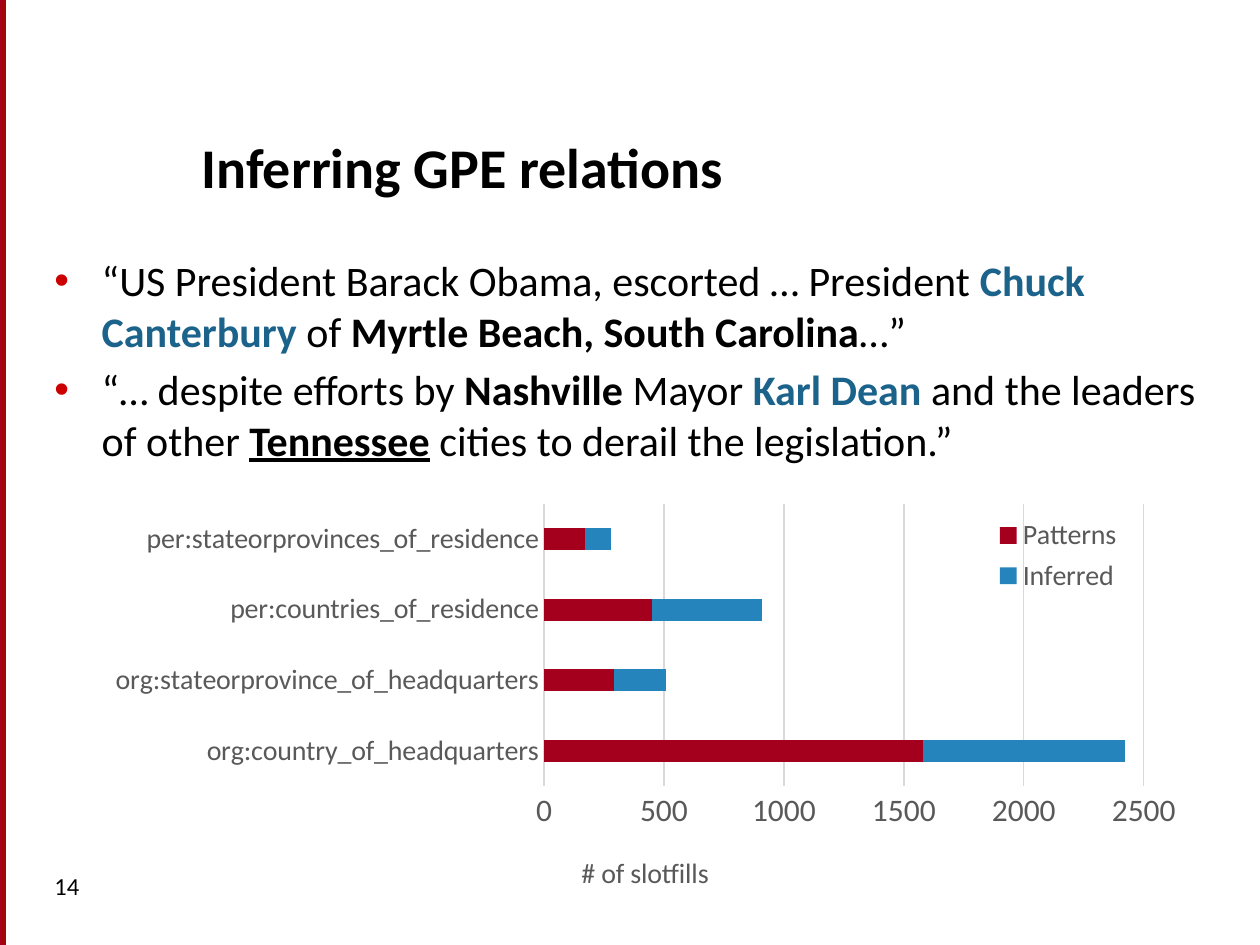
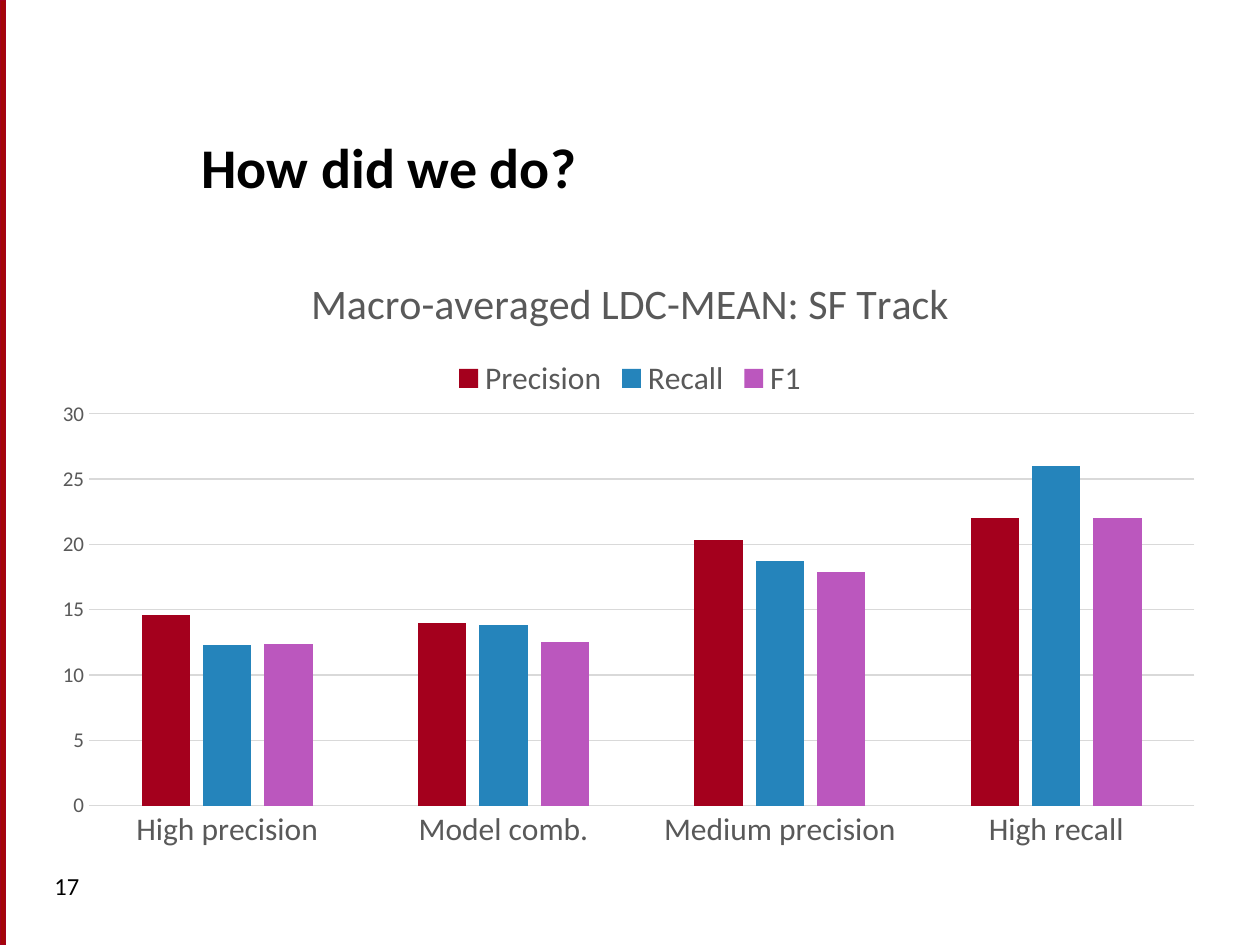
import pptx
import pptx.util
import pptx.chart.data
import pptx.dml.color
import pptx.enum.chart
import pptx.enum.shapes
import pptx.enum.text
import pptx.oxml.ns
import pptx.oxml.xmlchemy

Pt = pptx.util.Pt
qn = pptx.oxml.ns.qn
XL = pptx.enum.chart

FONT = "Calibri"
BLACK, GREY, GRID = "000000", "595959", "D9D9D9"
BAND, RED, BLUE, PURPLE, NAME, BULLET = "A40508", "A4001D", "2584BB", "BB57BE", "1C638C", "CC0000"

PERSON = dict(bold=True, color=NAME)
PLACE = dict(bold=True)
QUOTES = [
    [("“US President Barack Obama, escorted … President ", {}), ("Chuck Canterbury", PERSON),
     (" of ", {}), ("Myrtle Beach, South Carolina", PLACE), ("…”", {})],
    [("“… despite efforts by ", {}), ("Nashville", PLACE), (" Mayor ", {}),
     ("Karl Dean", PERSON), (" and the leaders of other ", {}),
     ("Tennessee", dict(bold=True, underline=True)),
     (" cities to derail the legislation.”", {})],
]

SLOTFILLS = dict(
    kind=XL.XL_CHART_TYPE.BAR_STACKED, box=(60, 276, 612, 238), overlap=100,
    cats=["org:country_of_headquarters", "org:stateorprovince_of_headquarters",
          "per:countries_of_residence", "per:stateorprovinces_of_residence"],
    series=[("Patterns", [1580, 290, 450, 170], RED),
            ("Inferred", [840, 220, 460, 110], BLUE)],
    top=2500, step=500, cat_size=16, val_size=18, legend_size=16,
    legend_pos=XL.XL_LEGEND_POSITION.RIGHT, legend_area=(0.82, 0.07, 0.14, 0.21),
    plot_area=(0.41, 0.05, 0.56, 0.68),
    axis_title="# of slotfills", axis_title_at=(0.44, 0.88))

SCORES = dict(
    kind=XL.XL_CHART_TYPE.COLUMN_CLUSTERED, box=(24, 142, 672, 350), overlap=-27,
    cats=["High precision", "Model comb.", "Medium precision", "High recall"],
    series=[("Precision", [14.6, 14, 20.3, 22], RED),
            ("Recall", [12.3, 13.8, 18.7, 26], BLUE),
            ("F1", [12.4, 12.5, 17.9, 22], PURPLE)],
    top=30, step=5, cat_size=18, val_size=12, legend_size=18,
    legend_pos=XL.XL_LEGEND_POSITION.TOP, plot_area=(0.04, 0.27, 0.94, 0.64),
    title="Macro-averaged LDC-MEAN: SF Track")

SLIDES = [
    dict(title="Inferring GPE relations", number="14", quotes=QUOTES, chart=SLOTFILLS),
    dict(title="How did we do?", number="17", quotes=[], chart=SCORES),
]


def rgb(color):
    return pptx.dml.color.RGBColor.from_string(color)


def element(tag, **attrs):
    el = pptx.oxml.xmlchemy.OxmlElement(tag)
    for key, value in attrs.items():
        el.set(key, str(value))
    return el


def style(font, size, color):
    font.name, font.size = FONT, Pt(size)
    font.color.rgb = rgb(color)


def add_text(p, text, size=24, color=BLACK, bold=False, underline=False):
    r = p.add_run()
    r.text = text
    style(r.font, size, color)
    r.font.bold, r.font.underline = bold, underline


def add_box(s, left, top, width, height):
    tf = s.shapes.add_textbox(Pt(left), Pt(top), Pt(width), Pt(height)).text_frame
    tf.word_wrap = True
    return tf


def add_bullet(p, indent=27):
    pPr = p._p.get_or_add_pPr()
    pPr.set("marL", str(Pt(indent)))
    pPr.set("indent", str(-Pt(indent)))
    color = element("a:buClr")
    color.append(element("a:srgbClr", val=BULLET))
    pPr.extend([color, element("a:buFont", typeface="Arial"), element("a:buChar", char="•")])


def add_quotes(s, quotes):
    tf = add_box(s, 24, 142, 672, 130)
    for i, quote in enumerate(quotes):
        p = tf.add_paragraph() if i else tf.paragraphs[0]
        add_bullet(p)
        p.space_before = Pt(4.8 if i else 0)
        for text, fmt in quote:
            add_text(p, text, **fmt)


def place(parent, area, inner=False):
    for old in parent.findall(qn("c:layout")):
        parent.remove(old)
    layout = element("c:layout")
    manual = element("c:manualLayout")
    layout.append(manual)
    values = [("layoutTarget", "inner")] if inner else []
    values += [("xMode", "edge"), ("yMode", "edge")] + list(zip("xywh", area))
    for tag, value in values:
        manual.append(element("c:" + tag, val=value))
    overlay = parent.find(qn("c:overlay"))
    (parent[0] if overlay is None else overlay).addprevious(layout)


def format_axis(axis, size):
    style(axis.tick_labels.font, size, GREY)
    axis.major_tick_mark = axis.minor_tick_mark = XL.XL_TICK_MARK.NONE


def grid_line(line):
    line.color.rgb = rgb(GRID)
    line.width = Pt(0.75)


def add_chart(s, info):
    data = pptx.chart.data.CategoryChartData()
    data.categories = info["cats"]
    for name, values, color in info["series"]:
        data.add_series(name, values)
    chart = s.shapes.add_chart(info["kind"], *map(Pt, info["box"]), data).chart
    style(chart.font, 10, BLACK)

    plot = chart.plots[0]
    plot.vary_by_categories = False
    plot.gap_width, plot.overlap = 219, info["overlap"]
    for series, (name, values, color) in zip(plot.series, info["series"]):
        series.format.fill.solid()
        series.format.fill.fore_color.rgb = rgb(color)
    place(chart._chartSpace.chart.plotArea, info["plot_area"], inner=True)

    cat, val = chart.category_axis, chart.value_axis
    format_axis(cat, info["cat_size"])
    format_axis(val, info["val_size"])
    cat.has_major_gridlines = False
    grid_line(cat.format.line)
    val.has_major_gridlines = True
    grid_line(val.major_gridlines.format.line)
    val.format.line.fill.background()
    val.minimum_scale, val.maximum_scale, val.major_unit = 0, info["top"], info["step"]

    chart.has_legend = True
    legend = chart.legend
    legend.position = info["legend_pos"]
    legend.include_in_layout = False
    style(legend.font, info["legend_size"], GREY)
    if "legend_area" in info:
        place(legend._element, info["legend_area"])

    chart.has_title = "title" in info
    if chart.has_title:
        add_text(chart.chart_title.text_frame.paragraphs[0], info["title"], 24, GREY)
    if "axis_title" in info:
        title = val.axis_title
        add_text(title.text_frame.paragraphs[0], info["axis_title"], 16, GREY)
        place(title._element, info["axis_title_at"])


def add_slide(prs, content):
    s = prs.slides.add_slide(prs.slide_layouts[5])
    band = s.shapes.add_shape(pptx.enum.shapes.MSO_SHAPE.RECTANGLE, 0, 0, Pt(3.4), prs.slide_height)
    band.shadow.inherit = False
    band.fill.solid()
    band.fill.fore_color.rgb = rgb(BAND)
    band.line.color.rgb = rgb(RED)
    band.line.width = Pt(0.75)

    title = s.shapes.title
    title.left, title.top, title.width, title.height = map(Pt, (108, 40, 588, 78))
    tf = title.text_frame
    tf.auto_size = pptx.enum.text.MSO_AUTO_SIZE.NONE
    tf.vertical_anchor = pptx.enum.text.MSO_ANCHOR.BOTTOM
    tf.paragraphs[0].alignment = pptx.enum.text.PP_ALIGN.LEFT
    add_text(tf.paragraphs[0], content["title"], 32, bold=True)

    if content["quotes"]:
        add_quotes(s, content["quotes"])
    add_text(add_box(s, 24, 494, 156, 36).paragraphs[0], content["number"], 14)
    add_chart(s, content["chart"])


def main():
    prs = pptx.Presentation()
    prs.slide_width, prs.slide_height = Pt(720), Pt(540)
    for content in SLIDES:
        add_slide(prs, content)
    prs.save("out.pptx")


if __name__ == "__main__":
    main()
